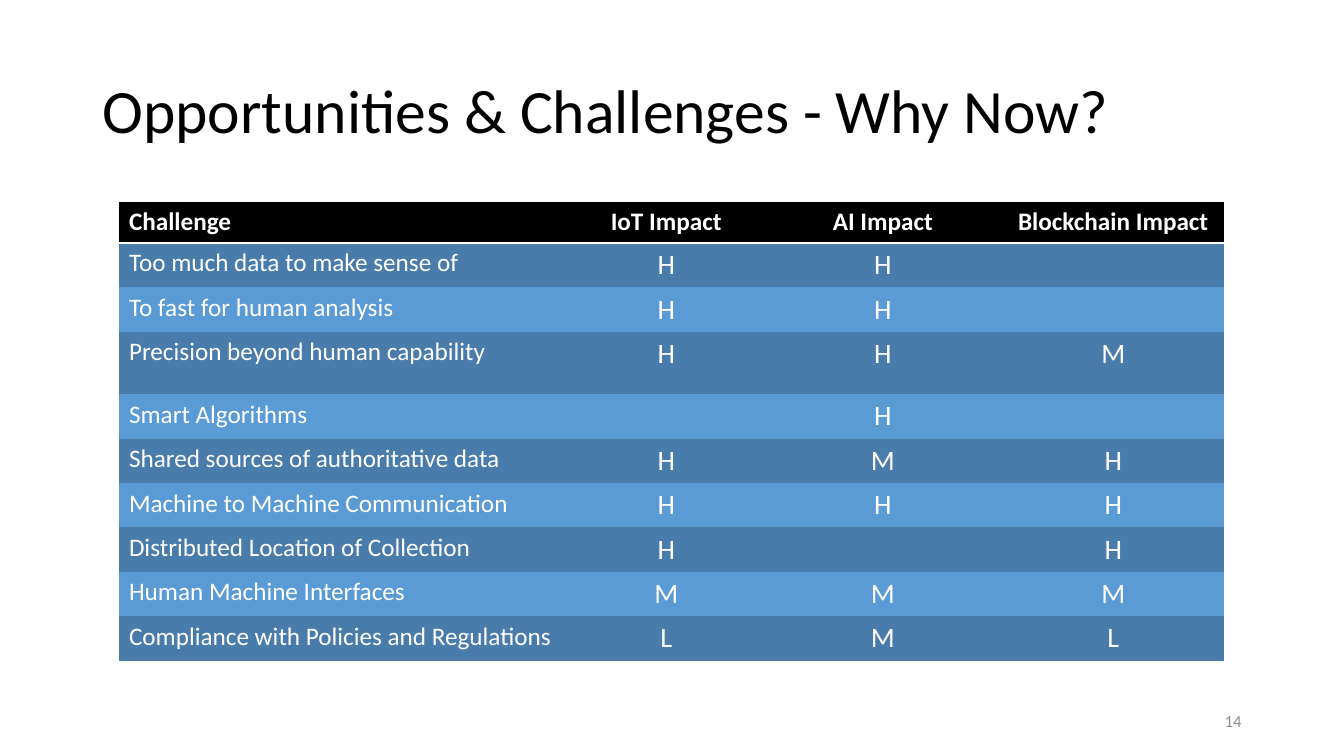
from dataclasses import dataclass

from lxml import etree
from pptx import Presentation
from pptx import util as u
from pptx.dml.color import RGBColor
from pptx.enum import text as t
from pptx.oxml import ns

BLACK = RGBColor(0x00, 0x00, 0x00)
WHITE = RGBColor(0xFF, 0xFF, 0xFF)
GREY = RGBColor(0x8C, 0x8C, 0x8C)
DARK = RGBColor(0x49, 0x7C, 0xAB)
LIGHT = RGBColor(0x5B, 0x9B, 0xD5)

FONT = "Calibri"
WIDE, HIGH = u.Inches(13.33), u.Inches(7.5)
COLS, ROWS = 160, 90
PLAIN = "{2D5ABB26-0587-4C30-8999-92F81FD0307C}"


@dataclass(frozen=True)
class Box:
    left: float
    top: float
    width: float
    height: float

    def place(self) -> tuple[int, int, int, int]:
        return across(self.left), down(self.top), across(self.width), down(self.height)


@dataclass(frozen=True)
class Style:
    size: int
    color: RGBColor
    bold: bool = False
    align: t.PP_ALIGN = t.PP_ALIGN.LEFT


@dataclass(frozen=True)
class Issue:
    name: str
    marks: tuple[str, str, str]
    height: float = 5.28


TITLE = Box(11, 4.8, 138, 17.4)
TABLE = Box(14.16, 24, 131.52, 54.6)
PAGE = Box(113, 83.4, 36, 4.8)
WIDTHS = (53.64, 23.04, 28.56, 26.28)

HEAD = Issue("Challenge", ("IoT Impact", "AI Impact", "Blockchain Impact"), 4.92)
ISSUES = (
    Issue("Too much data to make sense of", ("H", "H", "")),
    Issue("To fast for human analysis", ("H", "H", "")),
    Issue("Precision beyond human capability", ("H", "H", "M"), 7.44),
    Issue("Smart Algorithms", ("", "H", "")),
    Issue("Shared sources of authoritative data", ("H", "M", "H")),
    Issue("Machine to Machine Communication", ("H", "H", "H")),
    Issue("Distributed Location of Collection", ("H", "", "H")),
    Issue("Human Machine Interfaces", ("M", "M", "M")),
    Issue("Compliance with Policies and Regulations", ("L", "M", "L")),
)


def across(cols: float) -> int:
    return round(WIDE * cols / COLS)


def down(rows: float) -> int:
    return round(HIGH * rows / ROWS)


def write(frame, words: str, style: Style) -> None:
    para = frame.paragraphs[0]
    para.alignment = style.align
    run = para.add_run()
    run.text = words
    run.font.name = FONT
    run.font.size = u.Pt(style.size)
    run.font.bold = style.bold
    run.font.color.rgb = style.color


def rule(cell, color: RGBColor, width: float) -> None:
    line = etree.Element(ns.qn("a:lnB"), w=str(u.Pt(width)))
    fill = etree.SubElement(line, ns.qn("a:solidFill"))
    etree.SubElement(fill, ns.qn("a:srgbClr"), val=str(color))
    cell._tc.get_or_add_tcPr().insert(0, line)


def add_title(slide) -> None:
    title = slide.shapes.title
    title.left, title.top, title.width, title.height = TITLE.place()
    frame = title.text_frame
    frame.vertical_anchor = t.MSO_ANCHOR.MIDDLE
    write(frame, "Opportunities & Challenges - Why Now?", Style(44, BLACK))
    frame.paragraphs[0].line_spacing = 0.9


def add_grid(slide) -> None:
    lines = (HEAD, *ISSUES)
    shape = slide.shapes.add_table(len(lines), len(WIDTHS), *TABLE.place())
    shape._element.find(".//" + ns.qn("a:tableStyleId")).text = PLAIN
    table = shape.table
    for col, width in zip(table.columns, WIDTHS):
        col.width = across(width)
    for i, issue in enumerate(lines):
        table.rows[i].height = down(issue.height)
        top = i == 0
        for j, words in enumerate((issue.name, *issue.marks)):
            cell = table.cell(i, j)
            cell.fill.solid()
            cell.fill.fore_color.rgb = BLACK if top else DARK if i % 2 else LIGHT
            if top:
                rule(cell, WHITE, 2)
            if words:
                size = 18 if top or j == 0 else 20
                align = t.PP_ALIGN.CENTER if j else t.PP_ALIGN.LEFT
                write(cell.text_frame, words, Style(size, WHITE, top, align))


def add_page(slide) -> None:
    frame = slide.shapes.add_textbox(*PAGE.place()).text_frame
    frame.word_wrap = True
    frame.vertical_anchor = t.MSO_ANCHOR.MIDDLE
    write(frame, "14", Style(12, GREY, align=t.PP_ALIGN.RIGHT))


def main() -> None:
    deck = Presentation()
    deck.slide_width, deck.slide_height = WIDE, HIGH
    slide = deck.slides.add_slide(deck.slide_layouts.get_by_name("Title Only"))
    add_title(slide)
    add_grid(slide)
    add_page(slide)
    deck.save("out.pptx")


if __name__ == "__main__":
    main()
